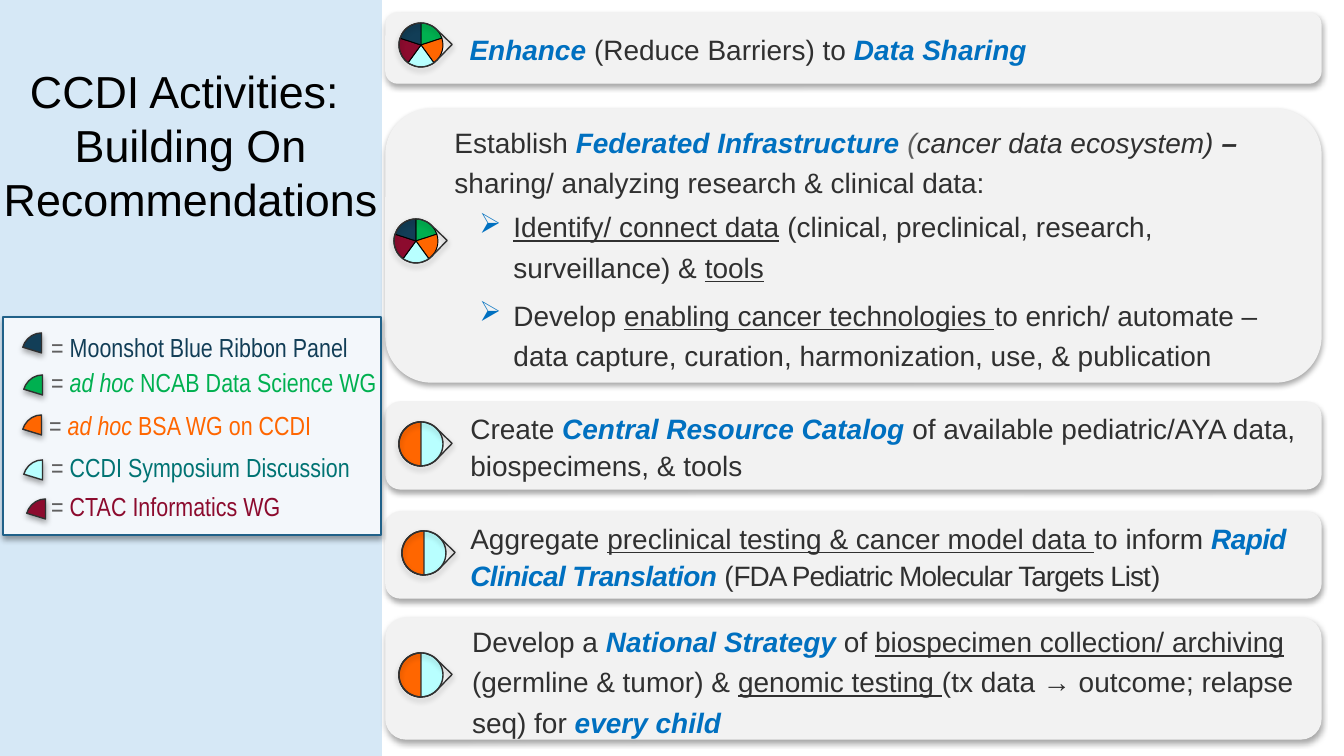
import lxml.etree
import pptx
import pptx.dml.color
import pptx.enum.shapes
import pptx.enum.text
import pptx.oxml.ns
import pptx.util
from dataclasses import dataclass

PX = pptx.util.Inches(10) / 1344
SHAPE = pptx.enum.shapes.MSO_SHAPE
ALIGN = pptx.enum.text.PP_ALIGN
ANCHOR = pptx.enum.text.MSO_ANCHOR
AUTO_SIZE = pptx.enum.text.MSO_AUTO_SIZE


@dataclass(frozen=True)
class Theme:
    font: str = "Arial"
    legend_font: str = "Arial Narrow"
    title_size: int = 24
    body_size: int = 15
    legend_size: int = 14
    black: str = "000000"
    ink: str = "303030"
    grey: str = "606060"
    accent: str = "0070C0"
    panel: str = "D6E8F6"
    card: str = "F2F2F2"
    legend_fill: str = "F3F7FB"
    legend_line: str = "206189"
    navy: str = "123E57"
    green: str = "00B050"
    orange: str = "FF6600"
    ice: str = "B8FFFF"
    teal: str = "007373"
    crimson: str = "8C0B2E"


THEME = Theme()

# Run styles: colour and font attributes
STYLES = {
    "plain": (THEME.ink, {}),
    "key": (THEME.accent, {"bold": True, "italic": True}),
    "under": (THEME.ink, {"underline": True}),
    "italic": (THEME.ink, {"italic": True}),
    "bracket": (THEME.grey, {"italic": True}),
    "dash": (THEME.ink, {"bold": True, "italic": True}),
}

# Cards: top, height, paragraphs of (format, runs); a run may end with its tracking
LEAD = {"left": 67, "line_spacing": 1.1, "space_after": 12}
INTRO = {"left": 42, "line_spacing": 1.2, "space_after": 2}
BULLET = {"left": 101, "hanging": 34, "line_spacing": 1.2, "space_after": 4}
CARDS = [
    (13, 70, [(LEAD, [("Enhance ", "key"), ("(Reduce Barriers) to ", "plain"),
                      ("Data Sharing", "key")])]),
    (109, 273, [
        (INTRO, [("Establish ", "plain"), ("Federated Infrastructure ", "key"),
                 ("(", "bracket"), ("cancer data ecosystem)", "italic"), (" – ", "dash"),
                 ("sharing/ analyzing research & clinical data:", "plain")]),
        (BULLET, [("Identify/ connect data", "under"),
                  (" (clinical, preclinical, research, surveillance) & ", "plain"),
                  ("tools", "under")]),
        (BULLET, [("Develop ", "plain"), ("enabling cancer technologies ", "under"),
                  ("to enrich/ automate – data capture, curation, harmonization, "
                   "use, & publication", "plain")]),
    ]),
    (402, 87, [(LEAD, [("Create ", "plain"), ("Central Resource Catalog ", "key"),
                       ("of available pediatric/AYA data, biospecimens, & tools", "plain")])]),
    (512, 86, [({**LEAD, "space_after": 6}, [
        ("Aggregate ", "plain"), ("preclinical testing & cancer model data ", "under"),
        ("to inform ", "plain"), ("Rapid Clinical Translation ", "key", -30), ("(", "plain"),
        ("FDA Pediatric Molecular Targets List", "plain", -50), (")", "plain")])]),
    (618, 121, [({**LEAD, "line_spacing": 1.2}, [
        ("Develop a ", "plain"), ("National Strategy ", "key"), ("of ", "plain"),
        ("biospecimen collection/ archiving ", "under"), ("(germline & tumor) & ", "plain"),
        ("genomic testing ", "under"), ("(tx data → outcome; relapse seq) for ", "plain"),
        ("every child", "key")])]),
]

# Legend: text left, top, width; wedge left, top; wedge colour, text colour, italic part, label
LEGEND = [
    (38, 325, 326, 22, 333, THEME.navy, THEME.navy, "", "Moonshot Blue Ribbon Panel"),
    (38, 360, 356, 23, 375, THEME.green, THEME.green, "ad hoc ", "NCAB Data Science WG"),
    (36, 403, 291, 22, 415, THEME.orange, THEME.orange, "ad hoc ", "BSA WG on CCDI"),
    (38, 445, 329, 23, 460, THEME.ice, THEME.teal, "", "CCDI Symposium Discussion"),
    (38, 484, 259, 26, 499, THEME.crimson, THEME.crimson, "", "CTAC Informatics WG"),
]
WHEELS = [(399, 23), (394, 219)]
HALVES = [(399, 422), (402, 531), (399, 653)]
ICON = 44


def px(*lengths):
    return [round(length * PX) for length in lengths]


def rgb(color):
    return pptx.dml.color.RGBColor.from_string(color)


def add_element(parent, tag, **attributes):
    element = lxml.etree.SubElement(parent, pptx.oxml.ns.qn(tag))
    for name, value in attributes.items():
        element.set(name, str(value))
    return element


def set_format(target, values):
    for name, value in values.items():
        setattr(target, name, value)


def paint(shape, fill, line, width):
    if fill:
        shape.fill.solid()
        shape.fill.fore_color.rgb = rgb(fill)
    else:
        shape.fill.background()
    shape.line.color.rgb = rgb(line)
    shape.line.width = pptx.util.Pt(width)


def add_shape(shapes, kind, box, fill, line, width=0.75, shadow=False, angles=()):
    shape = shapes.add_shape(kind, *px(*box))
    paint(shape, fill, line, width)
    shape.shadow.inherit = False
    for index, angle in enumerate(angles):
        shape.adjustments[index] = angle * 0.6
    if shadow:
        effects = shape._element.spPr.find(pptx.oxml.ns.qn("a:effectLst"))
        outer = add_element(effects, "a:outerShdw", blurRad=40000, dist=23000,
                            dir=5400000, rotWithShape=0)
        add_element(add_element(outer, "a:srgbClr", val=THEME.black), "a:alpha", val=35000)
    return shape


def add_run(paragraph, text, color, values):
    run = paragraph.add_run()
    run.text = text
    run.font.color.rgb = rgb(color)
    set_format(run.font, values)
    return run


def add_title(slide):
    title = slide.shapes.title
    set_format(title, dict(zip(("left", "top", "width", "height"), px(0, 0, 381, 756))))
    paint(title, THEME.panel, THEME.panel, 0.75)
    frame = title.text_frame
    set_format(frame, {"margin_left": 0, "margin_right": 0, "margin_bottom": 0,
                       "margin_top": px(64)[0], "word_wrap": True,
                       "auto_size": AUTO_SIZE.NONE, "vertical_anchor": ANCHOR.TOP})
    paragraph = frame.paragraphs[0]
    paragraph.alignment = ALIGN.CENTER
    values = {"name": THEME.font, "size": pptx.util.Pt(THEME.title_size)}
    add_run(paragraph, "CCDI Activities: ", THEME.black, values)
    paragraph.add_line_break()
    add_run(paragraph, "Building On Recommendations", THEME.black, values)


def fill_paragraph(paragraph, layout, runs):
    properties = paragraph._p.get_or_add_pPr()
    left, hanging = px(layout["left"], layout.get("hanging", 0))
    properties.set("marL", str(left))
    properties.set("indent", str(-hanging))
    if hanging:
        add_element(add_element(properties, "a:buClr"), "a:srgbClr", val=THEME.accent)
        add_element(properties, "a:buChar", char="➢")
    set_format(paragraph, {"alignment": ALIGN.LEFT, "line_spacing": layout["line_spacing"],
                           "space_after": pptx.util.Pt(layout["space_after"])})
    for text, style, *tracking in runs:
        color, values = STYLES[style]
        run = add_run(paragraph, text, color, {
            "name": THEME.font, "size": pptx.util.Pt(THEME.body_size), **values})
        if tracking:
            run.font._element.set("spc", str(tracking[0]))


def add_card(slide, top, height, paragraphs):
    card = add_shape(slide.shapes, SHAPE.ROUNDED_RECTANGLE, (386, top, 935, height),
                     THEME.card, THEME.card, shadow=True)
    frame = card.text_frame
    set_format(frame, {"word_wrap": True, "vertical_anchor": ANCHOR.MIDDLE})
    for index, (layout, runs) in enumerate(paragraphs):
        paragraph = frame.add_paragraph() if index else frame.paragraphs[0]
        fill_paragraph(paragraph, layout, runs)


def add_pointer(shapes, box):
    pointer = add_shape(shapes, SHAPE.TEAR, box, None, THEME.ink, shadow=True)
    pointer.rotation = 44


def add_wheel(slide, left, top):
    shapes = slide.shapes.add_group_shape().shapes
    box = (left, top, ICON, ICON)
    colors = (THEME.green, THEME.orange, THEME.ice, THEME.crimson, THEME.navy)
    for index, color in enumerate(colors):
        start = 270 + 72 * index
        add_shape(shapes, SHAPE.PIE, box, color, THEME.black, 0.5,
                  angles=(start % 360, (start + 72) % 360))
    add_pointer(shapes, box)


def add_half_disc(slide, left, top):
    shapes = slide.shapes.add_group_shape().shapes
    box = (left, top, ICON, ICON)
    add_shape(shapes, SHAPE.OVAL, box, THEME.ice, THEME.ink)
    add_shape(shapes, SHAPE.PIE, box, THEME.orange, THEME.ink, angles=(90, 270))
    add_pointer(shapes, box)


def add_legend(slide):
    shapes = slide.shapes.add_group_shape().shapes
    add_shape(shapes, SHAPE.RECTANGLE, (3, 317, 378, 218), THEME.legend_fill,
              THEME.legend_line, 1, shadow=True)
    values = {"name": THEME.legend_font, "size": pptx.util.Pt(THEME.legend_size)}
    for left, top, width, wedge_left, wedge_top, fill, color, prefix, label in LEGEND:
        frame = shapes.add_textbox(*px(left, top, width, 46)).text_frame
        set_format(frame, {"word_wrap": False, "auto_size": AUTO_SIZE.SHAPE_TO_FIT_TEXT})
        paragraph = frame.paragraphs[0]
        add_run(paragraph, "= ", THEME.grey, values)
        if prefix:
            add_run(paragraph, prefix, color, {**values, "italic": True})
        add_run(paragraph, label, color, values)
        add_shape(shapes, SHAPE.PIE, (wedge_left, wedge_top, 39, 40), fill, THEME.ink,
                  shadow=True, angles=(197, 270))


def main():
    presentation = pptx.Presentation()
    presentation.slide_width, presentation.slide_height = px(1344, 756)
    slide = presentation.slides.add_slide(presentation.slide_layouts[5])
    add_title(slide)
    for card in CARDS:
        add_card(slide, *card)
    # Source markers on the cards
    for position in WHEELS:
        add_wheel(slide, *position)
    for position in HALVES:
        add_half_disc(slide, *position)
    add_legend(slide)
    presentation.save("out.pptx")


if __name__ == "__main__":
    main()
